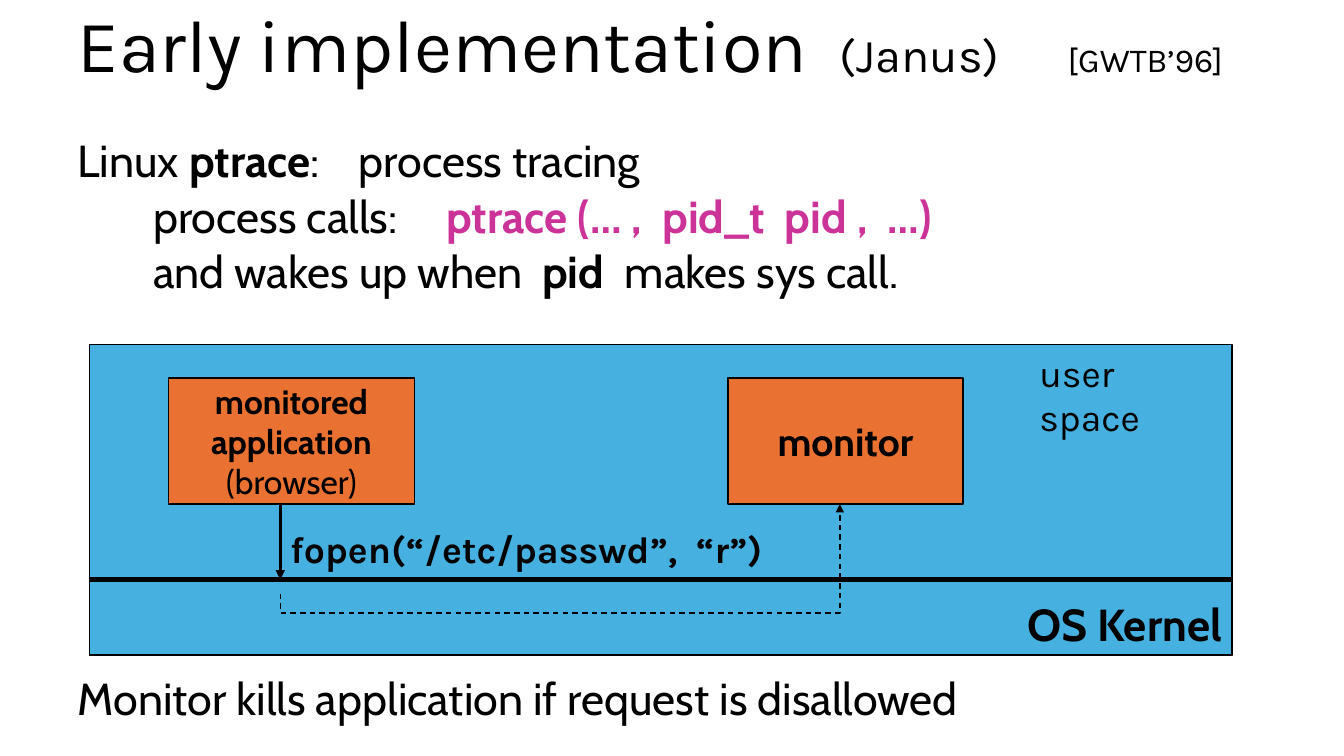
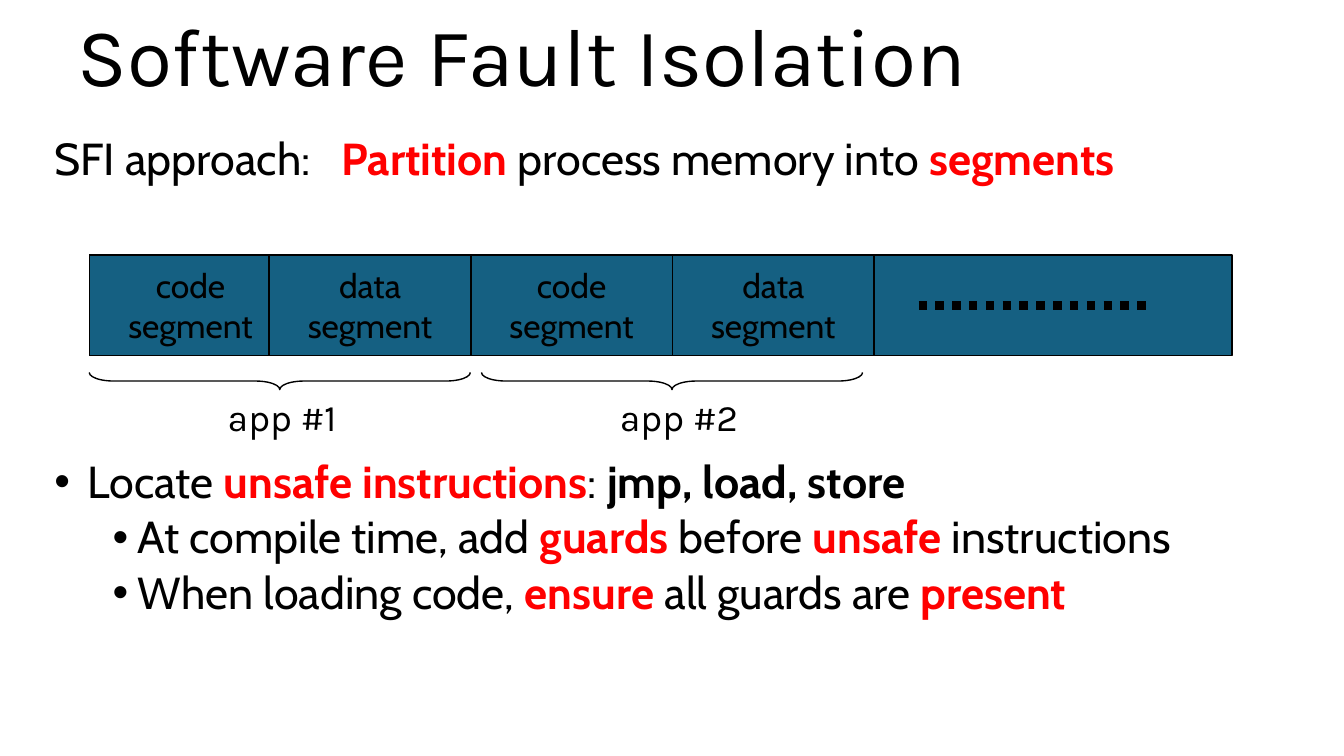
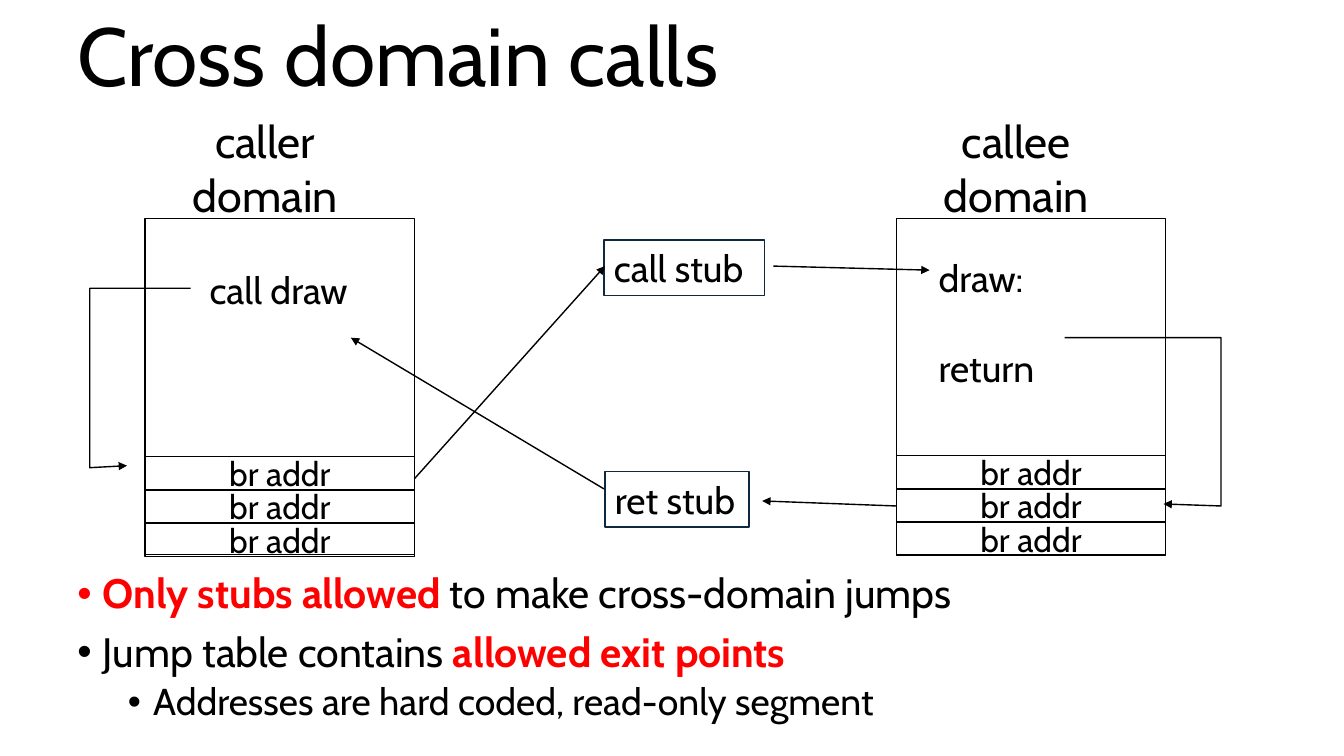
from lxml.etree import SubElement
from pptx import Presentation
from pptx.dml.color import RGBColor
from pptx.enum.dml import MSO_LINE_DASH_STYLE as DASH
from pptx.enum.shapes import MSO_CONNECTOR, MSO_SHAPE as SHAPE
from pptx.enum.text import MSO_ANCHOR as ANCHOR, PP_ALIGN as ALIGN
from pptx.oxml.ns import qn
from pptx.util import Inches, Pt

COLORS = {
    "black": "000000",
    "red": "FF0000",
    "magenta": "CC3399",
    "sky": "46B1E1",
    "orange": "E97132",
    "teal": "156082",
    "navy": "0E2841",
}
TITLE = {"size": 58.7, "font": "Karla", "anchor": ANCHOR.MIDDLE, "spacing": 0.9}
BODY = {"size": 32, "spacing": 0.9}
LABEL = {"size": 26.7}
KARLA_LABEL = {"size": 26.7, "font": "Karla"}
BLOCK = {"outline": "black", "align": ALIGN.CENTER, "anchor": ANCHOR.MIDDLE}
BOLD = {"bold": True}
RED = {"bold": True, "color": "red"}


def add_text(page, at, paragraphs=(), *, shape=None, fill=None, outline=None, size=24,
             font="Cabin", bold=False, align=ALIGN.LEFT, anchor=ANCHOR.TOP, spacing=1):
    """Add a text box, or a shape if one is named or a fill or outline is given.

    A paragraph is a string or a dict with "runs" and optional "before" (points),
    "tabs" (inches), "bullet" (left margin, hanging indent) and "size".
    A run is a string or a (string, format) pair.
    """
    place = [Inches(length) for length in at]
    if shape or fill or outline:
        box = page.shapes.add_shape(shape or SHAPE.RECTANGLE, *place)
        box.shadow.inherit = False
        if fill:
            box.fill.solid()
            box.fill.fore_color.rgb = RGBColor.from_string(COLORS[fill])
        else:
            box.fill.background()
        box.line.color.rgb = RGBColor.from_string(COLORS[outline or "black"])
        box.line.width = Pt(1)
    else:
        box = page.shapes.add_textbox(*place)

    frame = box.text_frame
    frame.word_wrap = True
    frame.vertical_anchor = anchor
    for index, content in enumerate(paragraphs):
        if isinstance(content, str):
            content = {"runs": [content]}
        para = frame.paragraphs[0] if index == 0 else frame.add_paragraph()
        para.alignment = align
        para.line_spacing = spacing
        if "before" in content:
            para.space_before = Pt(content["before"])
        properties = para._p.get_or_add_pPr()
        if "bullet" in content:
            margin, hanging = content["bullet"]
            properties.set("marL", str(Inches(margin)))
            properties.set("indent", str(-Inches(hanging)))
            SubElement(properties, qn("a:buFont"), typeface="Arial")
            SubElement(properties, qn("a:buChar"), char="•")
        if "tabs" in content:
            tab_list = SubElement(properties, qn("a:tabLst"))
            for stop in content["tabs"]:
                SubElement(tab_list, qn("a:tab"), pos=str(Inches(stop)), algn="l")
        for run in content["runs"]:
            words, look = (run, {}) if isinstance(run, str) else run
            span = para.add_run()
            span.text = words
            span.font.name = font
            span.font.size = Pt(look.get("size", content.get("size", size)))
            span.font.bold = look.get("bold", bold)
            span.font.color.rgb = RGBColor.from_string(COLORS[look.get("color", "black")])
    return box


def add_line(page, *points, width=1, dash=None, arrow=True):
    """Draw a straight connector through two points, or an open outline through more."""
    corners = [(Inches(x), Inches(y)) for x, y in points]
    if len(corners) == 2:
        line = page.shapes.add_connector(MSO_CONNECTOR.STRAIGHT, *corners[0], *corners[1])
    else:
        builder = page.shapes.build_freeform(*corners[0])
        builder.add_line_segments(corners[1:], close=False)
        line = builder.convert_to_shape()
        line.fill.background()
    line.line.color.rgb = RGBColor.from_string(COLORS["black"])
    line.line.width = Pt(width)
    if dash:
        line.line.dash_style = dash
    if arrow:
        SubElement(line.line._get_or_add_ln(), qn("a:tailEnd"), type="triangle")
    SubElement(line._element.spPr, qn("a:effectLst"))


deck = Presentation()
deck.slide_width = Inches(13.33)
deck.slide_height = Inches(7.5)
blank = deck.slide_layouts[6]

# Early implementation
page = deck.slides.add_slide(blank)
add_text(page, (0.67, -0.14, 12.33, 1.25), [
    {"tabs": [7.56, 9.82], "runs": [
        ("Early implementation", {"size": 52.8}),
        ("\t(Janus)", {"size": 33.6}),
        ("\t[GWTB’96]", {"size": 24}),
    ]},
], **TITLE)
add_text(page, (0.67, 1.33, 12.22, 1.75), [
    {"tabs": [2.79], "runs": ["Linux ", ("ptrace", BOLD), ":\tprocess tracing"]},
    {"tabs": [0.75, 3.66], "before": 5, "runs": [
        "\tprocess calls:\t",
        ("ptrace (… ,  pid_t  pid ,  …)", {"bold": True, "color": "magenta"}),
    ]},
    {"tabs": [0.75, 4.61, 5.43], "before": 5, "runs": [
        "\tand wakes up when\t", ("pid", BOLD), "\tmakes sys call.",
    ]},
], **BODY)
add_text(page, (0.67, 6.67, 12.22, 0.6),
         ["Monitor kills application if request is disallowed"], **BODY)

add_text(page, (0.89, 3.42, 11.33, 3.08), fill="sky", outline="black")
add_text(page, (0.89, 5.75, 11.33, 0.75), ["OS Kernel"], fill="sky", outline="black",
         size=32, bold=True, align=ALIGN.RIGHT, anchor=ANCHOR.BOTTOM)
add_text(page, (1.67, 3.75, 2.44, 1.25),
         ["monitored", "application", {"runs": [("(browser)", {"bold": False})]}],
         fill="orange", bold=True, **BLOCK)
add_text(page, (7.22, 3.75, 2.33, 1.25), ["monitor"],
         fill="orange", size=28, bold=True, **BLOCK)
add_text(page, (10.21, 3.42, 1.96, 0.55), ["user space"], **KARLA_LABEL)
add_line(page, (2.78, 5), (2.78, 5.75), width=2.25)
add_text(page, (2.78, 5.17, 5.31, 0.55), ["fopen(“/etc/passwd”,  “r”)"],
         bold=True, **KARLA_LABEL)
add_line(page, (2.78, 5.89), (2.78, 6.08), (8.33, 6.08), (8.33, 5), dash=DASH.DASH)
add_line(page, (0.89, 5.75), (12.22, 5.75), width=3, arrow=False)

# Software Fault Isolation
page = deck.slides.add_slide(blank)
add_text(page, (0.67, -0.03, 12, 1.25), ["Software Fault Isolation"], **TITLE)
add_text(page, (0.44, 1.31, 12.67, 0.6), [
    {"tabs": [2.85], "runs": [
        "SFI approach:\t", ("Partition", RED), " process memory into ", ("segments", RED),
    ]},
], **BODY)
add_text(page, (0.44, 4.51, 12.67, 1.75), [
    {"bullet": (0.33, 0.33), "runs": [
        "Locate ", ("unsafe instructions", RED), ": ", ("jmp, load, store", BOLD),
    ]},
    {"bullet": (0.83, 0.25), "before": 5, "runs": [
        "At compile time, add ", ("guards", RED), " before ", ("unsafe", RED),
        " instructions",
    ]},
    {"bullet": (0.83, 0.25), "before": 5, "runs": [
        "When loading code, ", ("ensure", RED), " all guards are ", ("present", RED),
    ]},
], **BODY)

add_text(page, (0.89, 2.53, 11.33, 1), fill="teal", outline="black")
for left, kind in [(0.89, "code"), (2.67, "data"), (4.67, "code"), (6.67, "data")]:
    add_text(page, (left, 2.53, 2, 1), [kind, "segment"], fill="teal", **BLOCK)
add_line(page, (9.11, 3.03), (11.44, 3.03), width=6, dash=DASH.ROUND_DOT, arrow=False)
for number, left in enumerate((2.16, 6.05), start=1):
    brace = add_text(page, (left + 0.53, 1.89, 0.17, 3.78), shape=SHAPE.LEFT_BRACE)
    brace.rotation = 270
    brace.adjustments[0] = 1.417
    add_text(page, (left, 3.86, 1.41, 0.55), [f"app #{number}"], **KARLA_LABEL)

# Cross domain calls
page = deck.slides.add_slide(blank)
add_text(page, (0.67, -0.03, 12, 1.25), ["Cross domain calls"], **{**TITLE, "font": "Cabin"})
for left, role, table_top in [(1.44, "caller", 4.53), (8.89, "callee", 4.52)]:
    add_text(page, (left, 2.17, 2.67, 3.33), outline="black")
    add_text(page, (left + 0.35, 1.08, 1.68, 1.18), [role, "domain"],
             size=32, align=ALIGN.CENTER)
    for row in range(3):
        add_text(page, (left, table_top + row * 0.33, 2.67, 0.33), ["br addr"], **BLOCK)

add_text(page, (1.98, 2.6, 1.66, 0.55), ["call draw"], **LABEL)
add_text(page, (9.21, 2.48, 1.18, 1.45),
         ["draw:", {"runs": ["return"], "before": 32.5}], **LABEL)
add_text(page, (5.99, 2.38, 1.59, 0.55), ["call stub"], outline="navy", **LABEL)
add_text(page, (6, 4.68, 1.43, 0.55), ["ret stub"], outline="navy", **LABEL)

for route in [
    [(1.89, 2.86), (0.89, 2.86), (0.89, 4.64), (1.26, 4.62)],
    [(4.11, 4.75), (6, 2.64)],
    [(7.67, 2.64), (9.22, 2.68)],
    [(10.56, 3.35), (12.11, 3.35), (12.11, 5.02), (11.54, 5)],
    [(8.89, 5.02), (7.56, 4.97)],
    [(5.99, 4.85), (3.48, 3.35)],
]:
    add_line(page, *route)

add_text(page, (0.67, 5.64, 12.22, 1.78), [
    {"bullet": (0.25, 0.25), "runs": [
        ("Only stubs allowed ", RED), "to make cross-domain jumps",
    ]},
    {"bullet": (0.25, 0.25), "before": 10, "runs": [
        "Jump table contains ", ("allowed exit points", RED),
    ]},
    {"bullet": (0.75, 0.25), "before": 5, "size": 26.7, "runs": [
        "Addresses are hard coded, read-only segment",
    ]},
], size=29.3, spacing=0.9)

deck.save("out.pptx")
